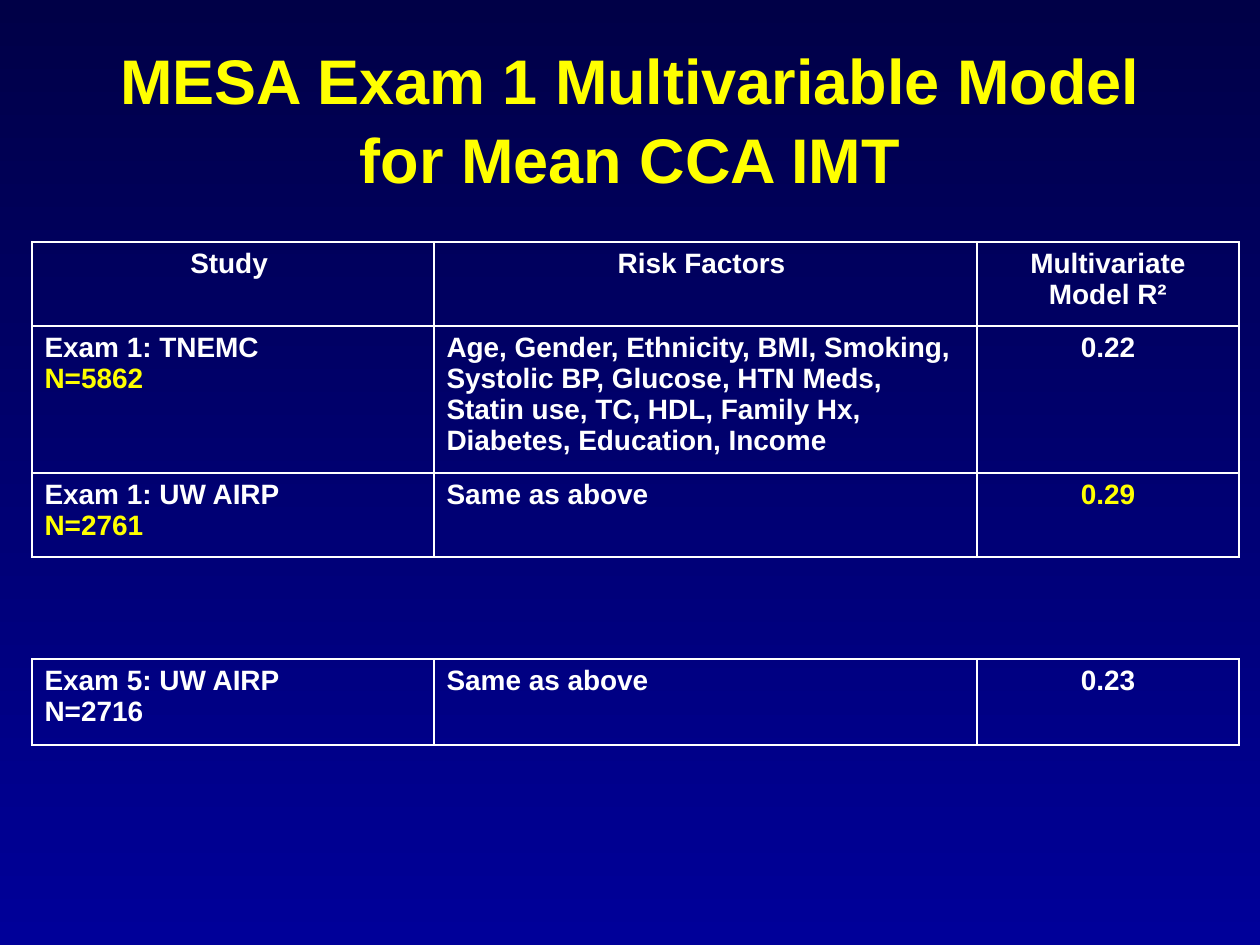
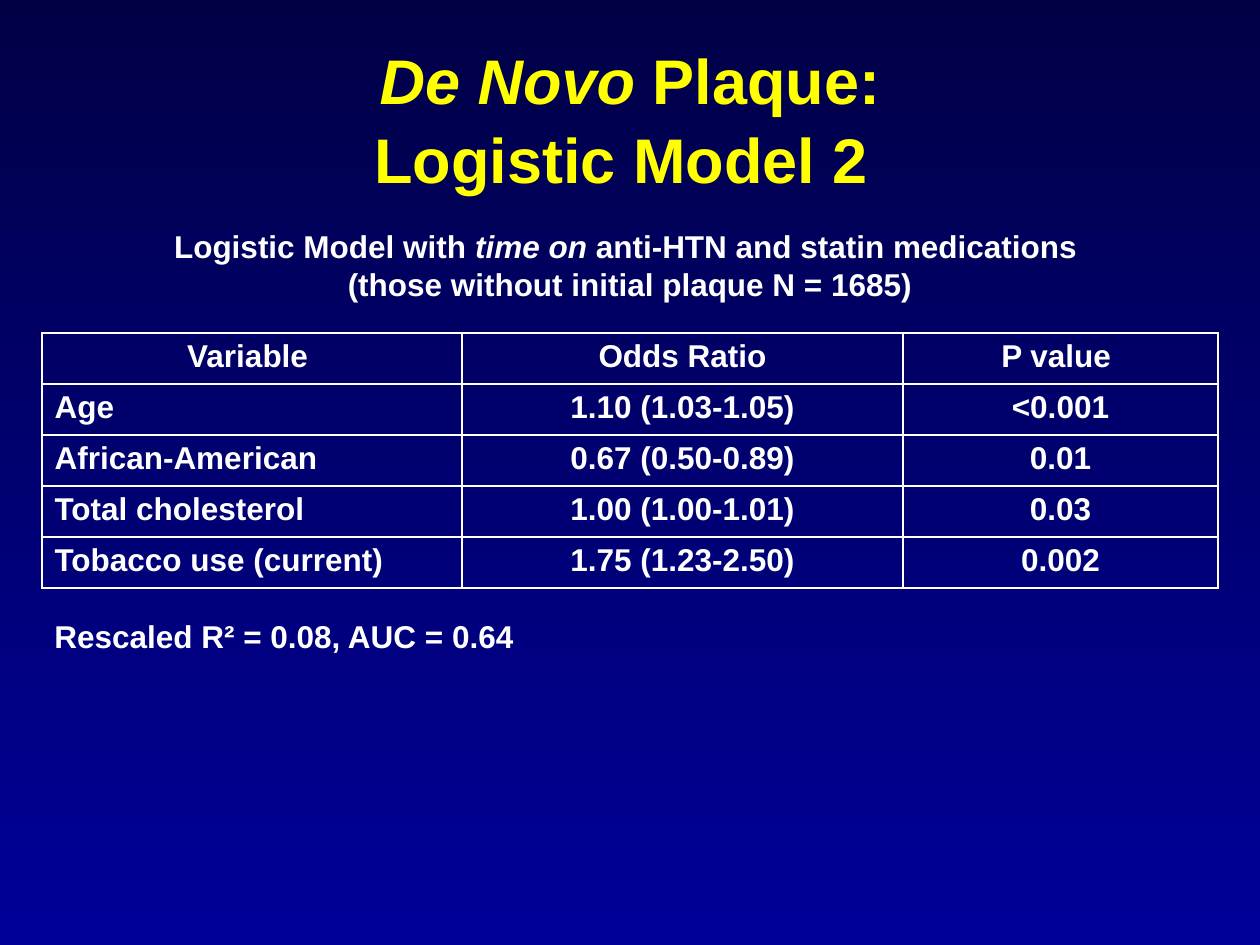
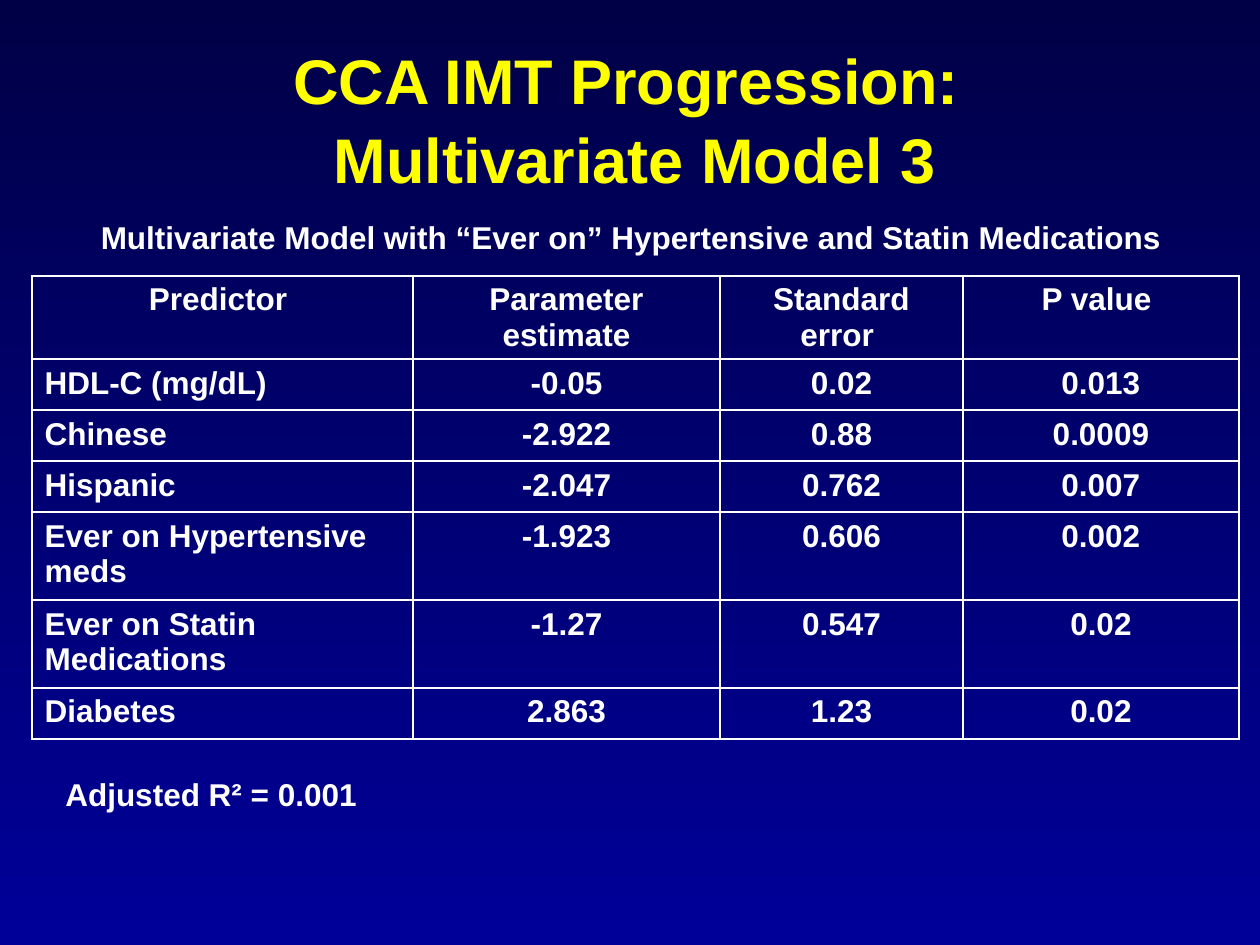
from lxml.etree import SubElement
from pptx import Presentation
from pptx.dml.color import RGBColor
from pptx.enum.text import MSO_ANCHOR, PP_ALIGN
from pptx.oxml import parse_xml
from pptx.oxml.ns import nsdecls, qn
from pptx.util import Emu, Pt

PX = 914400 / 126
FONT = "Arial"
NAVY_TOP = RGBColor(0x00, 0x00, 0x47)
NAVY_BOTTOM = RGBColor(0x00, 0x00, 0x99)
YELLOW = RGBColor(0xFF, 0xFF, 0x00)
WHITE = RGBColor(0xFF, 0xFF, 0xFF)
TITLE_BOX = (63, 38, 1134, 158)


def px(length):
    """Turn px into EMU."""
    return Emu(round(length * PX))


def italic(font):
    """Emphasise by slant."""
    font.italic = True


def highlight(font):
    """Emphasise by colour."""
    font.color.rgb = YELLOW


def write(frame, text, size, color, alignment, emphasise=italic):
    """Write paragraphs, emphasising the stretches between asterisks."""
    for index, line in enumerate(text.split("\n")):
        paragraph = frame.add_paragraph() if index else frame.paragraphs[0]
        paragraph.alignment = alignment
        font = paragraph.font
        font.name, font.size, font.bold = FONT, Pt(size), True
        font.color.rgb = color
        for part, stretch in enumerate(line.split("*")):
            for piece, words in enumerate(stretch.split("\v")):
                if piece:
                    paragraph.add_line_break()
                if words:
                    run = paragraph.add_run()
                    run.text = words
                    if part % 2:
                        emphasise(run.font)


def paint_background(presentation):
    """Give all slides the navy gradient."""
    fill = presentation.slide_master.background.fill
    fill.gradient()
    fill.gradient_angle = 270
    for stop, color in zip(fill.gradient_stops, (NAVY_TOP, NAVY_BOTTOM)):
        stop.color.rgb = color


def add_titled_slide(presentation, title, box=TITLE_BOX):
    """Add a title-only slide with the shared title style."""
    slide = presentation.slides.add_slide(presentation.slide_layouts[5])
    shape = slide.shapes.title
    shape.left, shape.top, shape.width, shape.height = map(px, box)
    frame = shape.text_frame
    frame.word_wrap = True
    frame.vertical_anchor = MSO_ANCHOR.MIDDLE
    write(frame, title, 36, YELLOW, PP_ALIGN.CENTER)
    for paragraph in frame.paragraphs:
        paragraph.line_spacing = 1.05
    return slide


def add_caption(slide, box, text, alignment=PP_ALIGN.LEFT):
    """Add a white text line above or below a table."""
    frame = slide.shapes.add_textbox(*map(px, box)).text_frame
    frame.word_wrap = True
    write(frame, text, 18, WHITE, alignment)


def outline_cell(cell):
    """Clear a cell's fill and draw white borders on its four sides."""
    cell.fill.background()
    properties = cell._tc.get_or_add_tcPr()
    for position, side in enumerate(("lnL", "lnR", "lnT", "lnB")):
        line = parse_xml(f'<a:{side} {nsdecls("a")} w="{Pt(1)}"/>')
        fill = SubElement(line, qn("a:solidFill"))
        SubElement(fill, qn("a:srgbClr")).set("val", str(WHITE))
        properties.insert(position, line)


def add_grid(slide, left, top, widths, heights, rows, size=18,
             centred=(), has_header=True):
    """Add an outlined table whose listed columns and header are centred."""
    box = (left, top, sum(widths), sum(heights))
    table = slide.shapes.add_table(len(rows), len(widths), *map(px, box)).table
    table.first_row = table.horz_banding = False
    for column, width in zip(table.columns, widths):
        column.width = px(width)
    for row, height in zip(table.rows, heights):
        row.height = px(height)
    for row_index, row in enumerate(rows):
        for column_index, text in enumerate(row):
            cell = table.cell(row_index, column_index)
            is_header = has_header and row_index == 0
            is_centred = is_header or column_index in centred
            alignment = PP_ALIGN.CENTER if is_centred else PP_ALIGN.LEFT
            write(cell.text_frame, text, size, WHITE, alignment, highlight)
            outline_cell(cell)


def build_exam_slide(presentation):
    """Compare the model across exams in two aligned tables."""
    slide = add_titled_slide(
        presentation, "MESA Exam 1 Multivariable Model for Mean CCA IMT")
    widths = (402, 543, 262)
    add_grid(slide, 32, 242, widths, (84, 147, 84), [
        ("Study ", "Risk Factors ", "Multivariate Model R²"),
        ("Exam 1: TNEMC\n*N=5862*",
         "Age, Gender, Ethnicity, BMI, Smoking, Systolic BP, Glucose, "
         "HTN Meds, Statin use, TC, HDL, Family Hx, Diabetes, Education, "
         "Income", "0.22"),
        ("Exam 1: UW AIRP\n*N=2761*", "Same as above", "*0.29*"),
    ], size=16, centred=(2,))
    add_grid(slide, 32, 659, widths, (86,), [
        ("Exam 5: UW AIRP\nN=2716", "Same as above", "0.23"),
    ], size=16, centred=(2,), has_header=False)


def build_plaque_slide(presentation):
    """Show the odds ratios of the logistic model."""
    slide = add_titled_slide(
        presentation, "*De Novo *Plaque:\vLogistic Model 2 ")
    add_grid(slide, 42, 333, (420, 441, 315), [51] * 5, [
        ("Variable ", "Odds Ratio", "P value "),
        ("Age", "1.10 (1.03-1.05)", "<0.001"),
        ("African-American", "0.67 (0.50-0.89)", "0.01"),
        ("Total cholesterol", "1.00 (1.00-1.01)", "0.03"),
        ("Tobacco use (current)", "1.75 (1.23-2.50)", "0.002"),
    ], centred=(1, 2))
    add_caption(slide, (42, 221, 1176, 100),
                "Logistic Model with *time on *anti-HTN and statin "
                "medications \n(those without initial plaque N = 1685)",
                PP_ALIGN.CENTER)
    add_caption(slide, (42, 611, 525, 50), "Rescaled R² = 0.08, AUC = 0.64")


def build_progression_slide(presentation):
    """Show the parameter estimates of the progression model."""
    slide = add_titled_slide(
        presentation, "CCA IMT Progression: \vMultivariate Model 3",
        (68, *TITLE_BOX[1:]))
    add_grid(slide, 32, 276, (381, 307, 243, 276),
             (83, 51, 51, 51, 88, 88, 51), [
        ("Predictor ", "Parameter estimate", "Standard error ", "P value "),
        ("HDL-C (mg/dL)", "-0.05", "0.02", "0.013"),
        ("Chinese", "-2.922", "0.88", "0.0009"),
        ("Hispanic", "-2.047", "0.762", "0.007"),
        ("Ever on Hypertensive meds", "-1.923", "0.606", "0.002"),
        ("Ever on Statin Medications", "-1.27", "0.547", "0.02"),
        ("Diabetes", "2.863", "1.23", "0.02"),
    ], centred=(1, 2, 3))
    add_caption(slide, (53, 769, 410, 50), "Adjusted R² = 0.001")
    add_caption(slide, (58, 212, 1155, 50),
                "Multivariate Model with “Ever on” Hypertensive and "
                "Statin Medications ", PP_ALIGN.CENTER)


def main():
    """Build and save the presentation."""
    presentation = Presentation()
    presentation.slide_width, presentation.slide_height = px(1260), px(945)
    paint_background(presentation)
    build_exam_slide(presentation)
    build_plaque_slide(presentation)
    build_progression_slide(presentation)
    presentation.save("out.pptx")


if __name__ == "__main__":
    main()
